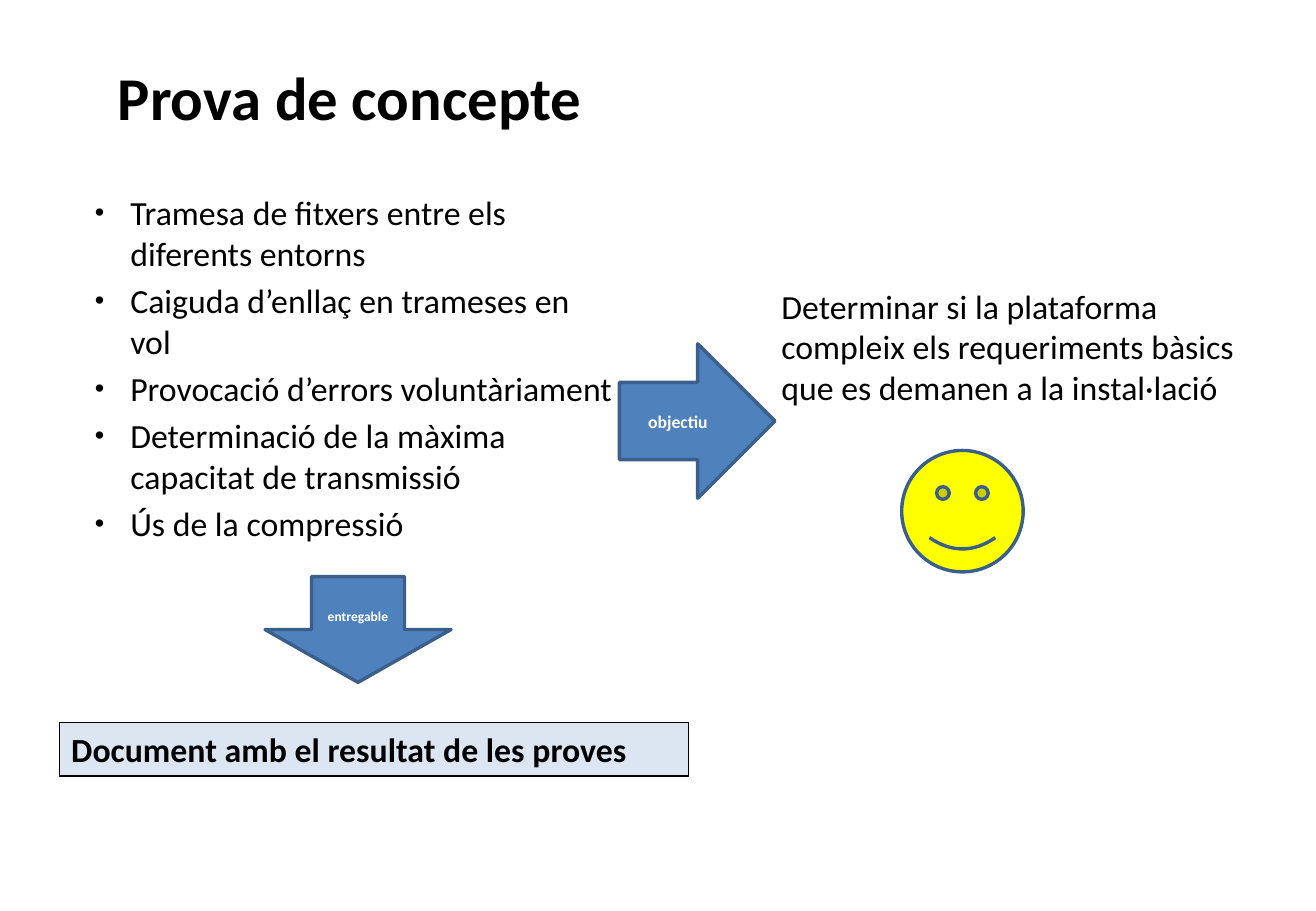
from lxml import etree
from pptx import Presentation
from pptx import util as u
from pptx.dml.color import RGBColor
from pptx.enum import shapes, text
from pptx.oxml.ns import qn

TESTS = [
    "Tramesa de fitxers entre els diferents entorns",
    "Caiguda d’enllaç en trameses en vol",
    "Provocació d’errors voluntàriament",
    "Determinació de la màxima capacitat de transmissió",
    "Ús de la compressió",
]
GOAL = ("Determinar si la plataforma compleix els requeriments bàsics "
        "que es demanen a la instal·lació")
INDENT = 0.74


def rgb(value):
    return RGBColor.from_string(value)


def place(sp, x, y, w, h):
    sp.left, sp.top, sp.width, sp.height = (u.Cm(v) for v in (x, y, w, h))


def add_run(p, words, size, color="000000", bold=False):
    r = p.add_run()
    r.text = words
    r.font.name = "Calibri"
    r.font.size = u.Pt(size)
    r.font.bold = bold
    r.font.color.rgb = rgb(color)


def set_bullet(p, indent, char=None):
    pPr = p._p.get_or_add_pPr()
    pPr.set("marL", str(u.Cm(INDENT)))
    pPr.set("indent", str(u.Cm(indent)))
    if char:
        etree.SubElement(pPr, qn("a:buSzPct"), val="80000")
        etree.SubElement(pPr, qn("a:buChar"), char=char)
    else:
        etree.SubElement(pPr, qn("a:buNone"))


def open_frame(sp):
    tf = sp.text_frame
    tf.word_wrap = True
    tf.auto_size = text.MSO_AUTO_SIZE.NONE
    tf.vertical_anchor = text.MSO_ANCHOR.TOP
    return tf


def add_figure(s, kind, box, fill, line, width):
    sp = s.shapes.add_shape(kind, *(u.Cm(v) for v in box))
    sp.shadow.inherit = False
    sp.fill.solid()
    sp.fill.fore_color.rgb = rgb(fill)
    sp.line.color.rgb = rgb(line)
    sp.line.width = u.Pt(width)
    return sp


def add_arrow(s, kind, box, label, size):
    sp = add_figure(s, kind, box, "4F81BD", "3A5F8C", 2)
    tf = sp.text_frame
    tf.vertical_anchor = text.MSO_ANCHOR.MIDDLE
    p = tf.paragraphs[0]
    p.alignment = text.PP_ALIGN.CENTER
    add_run(p, label, size, "FFFFFF", True)


def title_region(sp, x, y, w, h):
    place(sp, x, y, w, h)
    p = open_frame(sp).paragraphs[0]
    p.alignment = text.PP_ALIGN.LEFT
    add_run(p, "Prova de concepte", 36, bold=True)


def tests_region(sp, x, y, w, h):
    place(sp, x, y, w, h)
    tf = open_frame(sp)
    for i, words in enumerate(TESTS):
        p = tf.add_paragraph() if i else tf.paragraphs[0]
        p.space_before = u.Pt(4 if i else 0)
        set_bullet(p, -INDENT, "•")
        add_run(p, words, 20)


def goal_region(s, sp, x, y, w, h):
    arrow_w, smile = 3.25, 2.54
    text_x = x + 2.39
    place(sp, text_x, y, x + w - text_x, 3.78)
    p = open_frame(sp).paragraphs[0]
    p.space_before = u.Pt(0)
    set_bullet(p, 0)
    add_run(p, GOAL, 20)
    add_arrow(s, shapes.MSO_SHAPE.RIGHT_ARROW,
              (x, y + 1.35, arrow_w, 3.23), "objectiu", 10.5)
    add_figure(s, shapes.MSO_SHAPE.SMILEY_FACE,
               (x + 5.9, y + h - smile, smile, smile), "FFFF00", "3A5F8C", 2)


def deliverable_region(s, x, y, w, h):
    doc_h = 1.12
    add_arrow(s, shapes.MSO_SHAPE.DOWN_ARROW,
              (x + 4.3, y, 3.89, 2.21), "entregable", 8)
    doc = add_figure(s, shapes.MSO_SHAPE.RECTANGLE,
                     (x, y + h - doc_h, w, doc_h), "DCE6F2", "000000", 0.75)
    p = open_frame(doc).paragraphs[0]
    p.alignment = text.PP_ALIGN.LEFT
    add_run(p, "Document amb el resultat de les proves", 20, bold=True)


def main():
    prs = Presentation()
    prs.slide_width, prs.slide_height = u.Cm(27.51), u.Cm(19.05)
    s = prs.slides.add_slide(prs.slide_layouts[3])
    title, tests, goal = s.placeholders
    title_region(title, 2.21, 1.12, 23.29, 1.73)
    tests_region(tests, 1.73, 3.89, 11.43, 8.59)
    goal_region(s, goal, 12.95, 5.84, 13.82, 6.12)
    deliverable_region(s, 1.24, 12.06, 13.16, 4.17)
    prs.save("out.pptx")


if __name__ == "__main__":
    main()
